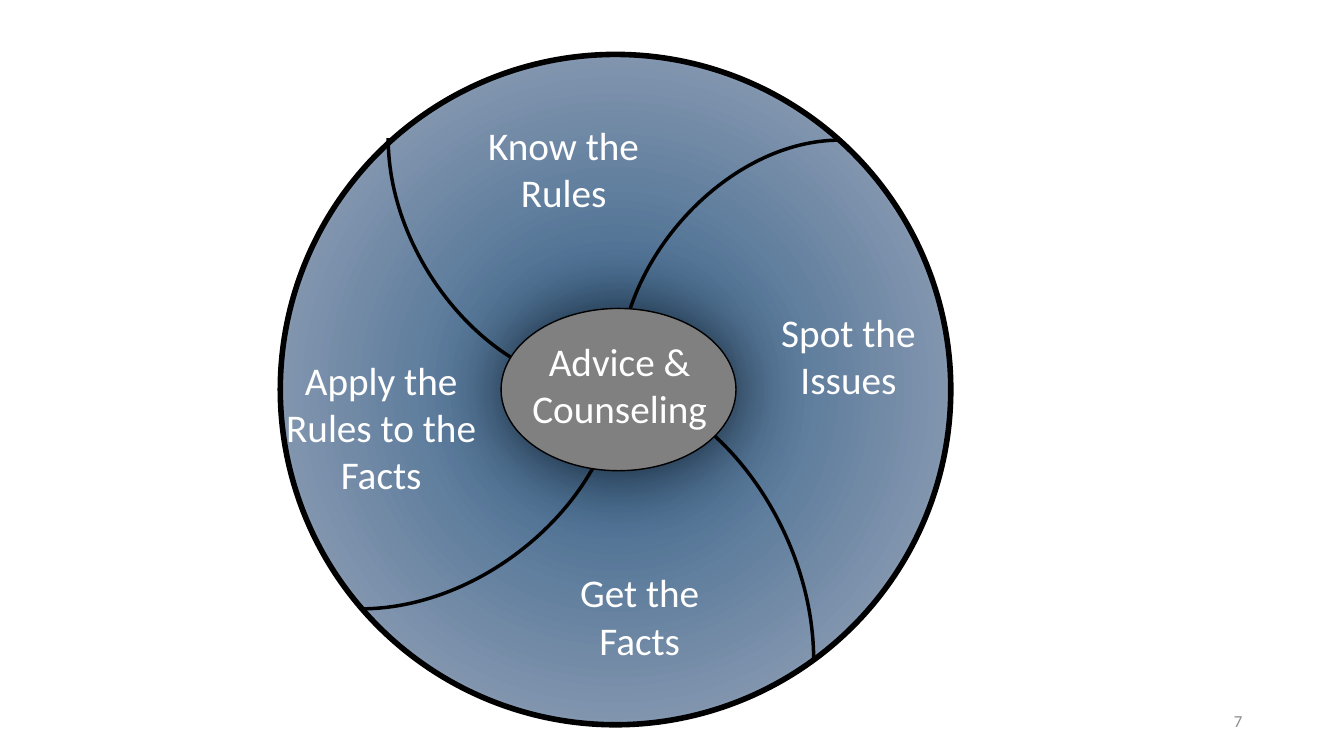
from dataclasses import dataclass

from lxml import etree
from pptx import Presentation
from pptx.dml.color import RGBColor
from pptx.enum.shapes import MSO_CONNECTOR, MSO_SHAPE
from pptx.enum.text import MSO_ANCHOR, PP_ALIGN
from pptx.oxml.ns import qn
from pptx.shapes.autoshape import Shape
from pptx.slide import Slide
from pptx.util import Inches, Pt

CURVE = MSO_CONNECTOR.CURVE
OVAL = MSO_SHAPE.OVAL
MIDDLE = MSO_ANCHOR.MIDDLE
CENTER = PP_ALIGN.CENTER
RIGHT = PP_ALIGN.RIGHT

BLACK = RGBColor(0x00, 0x00, 0x00)
WHITE = RGBColor(0xFF, 0xFF, 0xFF)
HUB_GRAY = RGBColor(0x80, 0x80, 0x80)
NUMBER_GRAY = RGBColor(0x8C, 0x8C, 0x8C)
WHEEL_CORE = RGBColor(0x30, 0x5C, 0x84)
WHEEL_RIM = RGBColor(0x84, 0x97, 0xB0)
FONT = "Calibri"


@dataclass(frozen=True)
class Box:
    left: float
    top: float
    width: float
    height: float

    def lengths(self) -> tuple[Inches, Inches, Inches, Inches]:
        return (Inches(self.left), Inches(self.top),
                Inches(self.width), Inches(self.height))


@dataclass(frozen=True)
class Label:
    text: str
    box: Box
    size: int = 28
    color: RGBColor = WHITE
    align: PP_ALIGN = CENTER


@dataclass(frozen=True)
class Divider:
    begin: tuple[float, float]
    end: tuple[float, float]
    bend: int
    rotation: int = 0


WHEEL = Box(2.78, 0.54, 6.65, 6.65)
HUB = Box(4.97, 3.06, 2.33, 1.61)

DIVIDERS = (
    Divider((8.33, 1.39), (3.58, 6.04), 46100),
    Divider((3.37, 6.07), (8.55, 1.85), 52600, 270),
)

LABELS = (
    Label("Apply the Rules to the Facts", Box(2.74, 3.54, 2.08, 1.38)),
    Label("Know the Rules", Box(4.43, 1.01, 2.32, 1.33)),
    Label("Get the Facts", Box(5.51, 5.61, 1.67, 1)),
    Label("Spot the Issues", Box(7.58, 3.03, 1.67, 1)),
    Label("Advice & Counseling", Box(5, 3.22, 2.29, 1.18)),
    Label("7", Box(9.42, 6.95, 3, 0.4), 12, NUMBER_GRAY, RIGHT),
)


def add_oval(slide: Slide, box: Box, line_width: float) -> Shape:
    oval = slide.shapes.add_shape(OVAL, *box.lengths())
    oval.line.color.rgb = BLACK
    oval.line.width = Pt(line_width)
    oval.shadow.inherit = False
    return oval


def add_wheel(slide: Slide) -> None:
    wheel = add_oval(slide, WHEEL, 4)
    wheel.fill.gradient()
    core, rim = wheel.fill.gradient_stops
    core.color.rgb, core.position = WHEEL_CORE, 0
    rim.color.rgb, rim.position = WHEEL_RIM, 0.73
    gradient = wheel._element.spPr.find(qn("a:gradFill"))
    gradient.remove(gradient.find(qn("a:lin")))
    radial = etree.SubElement(gradient, qn("a:path"), path="circle")
    etree.SubElement(radial, qn("a:fillToRect"),
                     l="50000", t="50000", r="50000", b="50000")


def add_hub(slide: Slide) -> None:
    hub = add_oval(slide, HUB, 1)
    hub.fill.solid()
    hub.fill.fore_color.rgb = HUB_GRAY
    effects = hub._element.spPr.find(qn("a:effectLst"))
    shadow = etree.SubElement(effects, qn("a:outerShdw"),
                              blurRad=str(Pt(52)), dist=str(Pt(1)),
                              dir=str(42 * 60000), rotWithShape="0")
    tint = etree.SubElement(shadow, qn("a:srgbClr"), val=str(BLACK))
    etree.SubElement(tint, qn("a:alpha"), val="65000")


def add_divider(slide: Slide, divider: Divider) -> None:
    ends = [Inches(value) for value in divider.begin + divider.end]
    curve = slide.shapes.add_connector(CURVE, *ends)
    curve.line.color.rgb = BLACK
    curve.line.width = Pt(2.5)
    properties = curve._element.spPr
    properties.find(qn("a:xfrm")).set("rot", str(divider.rotation * 60000))
    adjustments = properties.find(qn("a:prstGeom")).find(qn("a:avLst"))
    etree.SubElement(adjustments, qn("a:gd"),
                     name="adj1", fmla=f"val {divider.bend}")
    etree.SubElement(properties, qn("a:effectLst"))


def add_label(slide: Slide, label: Label) -> None:
    frame = slide.shapes.add_textbox(*label.box.lengths()).text_frame
    frame.word_wrap = True
    frame.vertical_anchor = MIDDLE
    if label.align == CENTER:
        frame.margin_left = frame.margin_right = Inches(0.05)
    paragraph = frame.paragraphs[0]
    paragraph.alignment = label.align
    run = paragraph.add_run()
    run.text = label.text
    run.font.name = FONT
    run.font.size = Pt(label.size)
    run.font.color.rgb = label.color


def main() -> None:
    deck = Presentation()
    deck.slide_width = Inches(13.33)
    deck.slide_height = Inches(7.5)
    slide = deck.slides.add_slide(deck.slide_layouts.get_by_name("Blank"))
    add_wheel(slide)
    for divider in DIVIDERS:
        add_divider(slide, divider)
    add_hub(slide)
    for label in LABELS:
        add_label(slide, label)
    deck.save("out.pptx")


if __name__ == "__main__":
    main()
